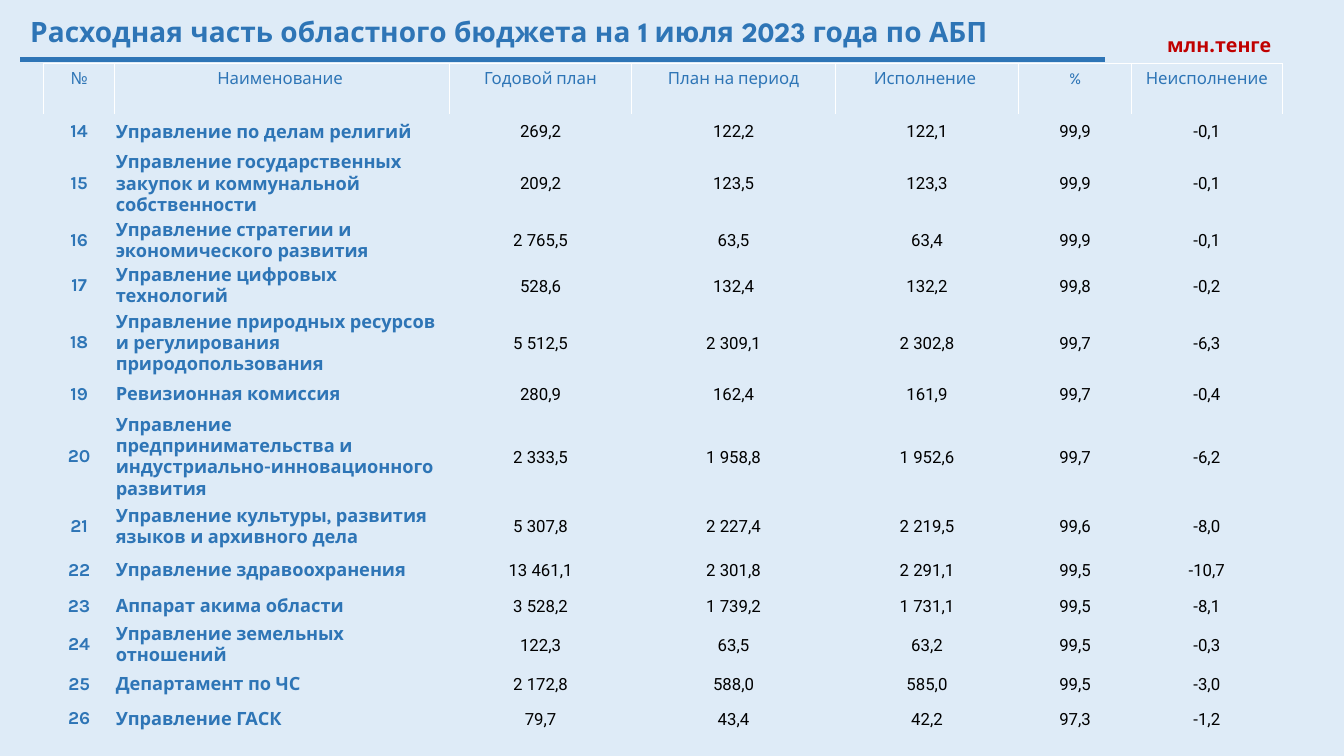
from lxml import etree
from pptx import Presentation
from pptx.dml.color import RGBColor
from pptx.enum.shapes import MSO_CONNECTOR
from pptx.enum.text import MSO_ANCHOR, MSO_AUTO_SIZE, PP_ALIGN
from pptx.oxml import parse_xml
from pptx.oxml.ns import nsdecls, qn
from pptx.util import Pt

LEFT, CENTER = PP_ALIGN.LEFT, PP_ALIGN.CENTER
TOP, MIDDLE = MSO_ANCHOR.TOP, MSO_ANCHOR.MIDDLE
FIT_SHAPE = MSO_AUTO_SIZE.SHAPE_TO_FIT_TEXT
STRAIGHT = MSO_CONNECTOR.STRAIGHT
PLAIN_TABLE = "{2D5ABB26-0587-4C30-8999-92F81FD0307C}"
TITLE_ONLY = 5

COLUMN_WIDTHS = [51, 239, 130.3, 145.4, 131, 80.6, 107.6]
ROW_HEIGHTS = [36, 25.2, 49, 32.4, 32.4, 49, 24.5, 64.8, 34.6, 28.1, 23, 32.4, 23.8, 25.9, 23]
HEADINGS = ["№", "Наименование ", "Годовой план", "План на период", "Исполнение ", "%", "Неисполнение"]
FIRST_NUMBER = 14
DEPARTMENTS = [
    ("Управление по делам религий", "269,2", "122,2", "122,1", "99,9", "-0,1"),
    ("Управление государственных закупок и коммунальной собственности",
     "209,2", "123,5", "123,3", "99,9", "-0,1"),
    ("Управление стратегии и экономического развития", "2 765,5", "63,5", "63,4", "99,9", "-0,1"),
    ("Управление цифровых технологий", "528,6", "132,4", "132,2", "99,8", "-0,2"),
    ("Управление природных ресурсов и регулирования природопользования",
     "5 512,5", "2 309,1", "2 302,8", "99,7", "-6,3"),
    ("Ревизионная комиссия", "280,9", "162,4", "161,9", "99,7", "-0,4"),
    ("Управление предпринимательства и индустриально-инновационного развития",
     "2 333,5", "1 958,8", "1 952,6", "99,7", "-6,2"),
    ("Управление культуры, развития языков и архивного дела",
     "5 307,8", "2 227,4", "2 219,5", "99,6", "-8,0"),
    ("Управление здравоохранения", "13 461,1", "2 301,8", "2 291,1", "99,5", "-10,7"),
    ("Аппарат акима области", "3 528,2", "1 739,2", "1 731,1", "99,5", "-8,1"),
    ("Управление земельных отношений", "122,3", "63,5", "63,2", "99,5", "-0,3"),
    ("Департамент по ЧС", "2 172,8", "588,0", "585,0", "99,5", "-3,0"),
    ("Управление ГАСК", "79,7", "43,4", "42,2", "97,3", "-1,2"),
]


def color(value):
    return RGBColor.from_string(value)


def write(frame, text, *, size, font, ink, bold=False, align=LEFT):
    para = frame.paragraphs[0]
    para.alignment = align
    span = para.add_run()
    span.text = text
    span.font.size = Pt(size)
    span.font.name = font
    span.font.bold = bold
    span.font.color.rgb = color(ink)


class BudgetPage:
    blue, red, black, white, pale = "2E75B6", "C00000", "000000", "FFFFFF", "DEEBF7"
    display, label, figure = "League Spartan", "Karla", "Roboto"

    def __init__(self, deck):
        self.page = deck.slides.add_slide(deck.slide_layouts[TITLE_ONLY])
        self.page.background.fill.solid()
        self.page.background.fill.fore_color.rgb = color(self.pale)

    def title(self, text, left, top, width, height):
        box = self.page.shapes.title
        box.left, box.top, box.width, box.height = map(Pt, (left, top, width, height))
        frame = box.text_frame
        frame.word_wrap = True
        frame.auto_size = FIT_SHAPE
        frame.vertical_anchor = TOP
        write(frame, text, size=20, font=self.display, ink=self.blue, bold=True)

    def unit(self, text, left, top, width, height):
        box = self.page.shapes.add_textbox(*map(Pt, (left, top, width, height)))
        frame = box.text_frame
        frame.word_wrap = False
        frame.auto_size = FIT_SHAPE
        write(frame, text, size=14, font=self.display, ink=self.red, bold=True)

    def rule(self, left, right, height):
        line = self.page.shapes.add_connector(STRAIGHT, Pt(left), Pt(height), Pt(right), Pt(height))
        line.line.color.rgb = color(self.blue)
        line.line.width = Pt(3)
        etree.SubElement(line.element.spPr, qn("a:effectLst"))

    def border(self, cell):
        properties = cell._tc.get_or_add_tcPr()
        for index, side in enumerate(("lnL", "lnR", "lnT")):
            properties.insert(index, parse_xml(
                f'<a:{side} {nsdecls("a")} w="{Pt(1)}"><a:solidFill>'
                f'<a:srgbClr val="{self.white}"/></a:solidFill></a:{side}>'))

    def inset(self, cell, side, bottom):
        cell.margin_left = cell.margin_right = cell.margin_top = Pt(side)
        cell.margin_bottom = Pt(bottom)

    def heading_row(self, cells):
        for cell, text in zip(cells, HEADINGS):
            self.border(cell)
            write(cell.text_frame, text, size=12, font=self.label, ink=self.blue, align=CENTER)

    def department_row(self, cells, values):
        for column, (cell, text) in enumerate(zip(cells, values)):
            cell.vertical_anchor = MIDDLE
            if column > 0:
                self.inset(cell, 0.7, 0)
            align = LEFT if column == 1 else CENTER
            if column < 2:
                write(cell.text_frame, text, size=13, font=self.label, ink=self.blue,
                      bold=True, align=align)
            else:
                write(cell.text_frame, text, size=12, font=self.figure, ink=self.black, align=align)

    def table(self, left, top):
        holder = self.page.shapes.add_table(
            len(ROW_HEIGHTS), len(COLUMN_WIDTHS), Pt(left), Pt(top),
            Pt(sum(COLUMN_WIDTHS)), Pt(sum(ROW_HEIGHTS)))
        holder.element.find(".//" + qn("a:tableStyleId")).text = PLAIN_TABLE
        table = holder.table
        table.first_row = table.horz_banding = False
        for column, width in zip(table.columns, COLUMN_WIDTHS):
            column.width = Pt(width)
        for row, height in zip(table.rows, ROW_HEIGHTS):
            row.height = Pt(height)
        for cell in table.iter_cells():
            cell.fill.background()
        heading, *departments, spare = table.rows
        self.heading_row(heading.cells)
        for number, (row, values) in enumerate(zip(departments, DEPARTMENTS), FIRST_NUMBER):
            self.department_row(row.cells, (str(number), *values))
        for cell in spare.cells:
            self.inset(cell, 0, 0)


def main():
    deck = Presentation()
    deck.slide_width, deck.slide_height = Pt(960), Pt(540)
    page = BudgetPage(deck)
    page.rule(14.4, 789.1, 42.5)
    page.table(31, 45.4)
    page.unit("млн.тенге", 826.6, 20.2, 88.6, 24.5)
    page.title("Расходная часть областного бюджета на 1 июля 2023 года по АБП", 14.4, 6.5, 941.8, 31.7)
    deck.save("out.pptx")


if __name__ == "__main__":
    main()
